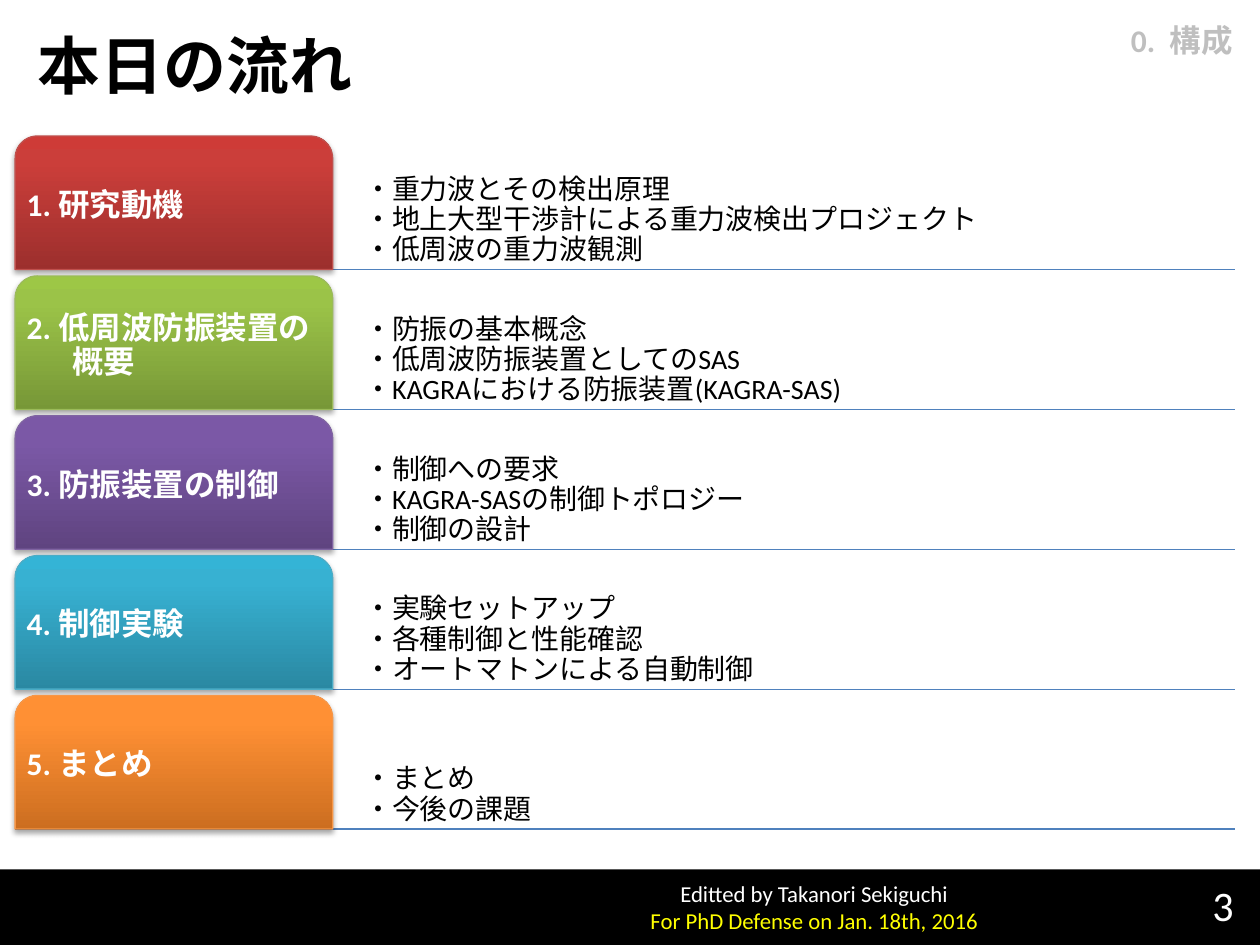
from copy import deepcopy
from dataclasses import dataclass

from lxml import etree
from pptx import Presentation
from pptx import util as u
from pptx.dml.color import RGBColor
from pptx.enum import shapes, text
from pptx.oxml import parse_xml
from pptx.oxml.ns import nsdecls, qn

FONT = "Calibri"
BLACK = RGBColor(0x00, 0x00, 0x00)
WHITE = RGBColor(0xFF, 0xFF, 0xFF)
YELLOW = RGBColor(0xFF, 0xFF, 0x00)
GREY = RGBColor(0xBF, 0xBF, 0xBF)
RULE_BLUE = RGBColor(0x4F, 0x81, 0xBD)

LEFT, RIGHT = 0.12, 9.8
TAB_W, ROW_H = 2.52, 1.06
TOP, PITCH = 1.08, 1.11


@dataclass
class Section:
    heading: list[str]
    topics: list[str]
    gradient: tuple[str, str, str]  # from bottom to top
    outline: str


@dataclass
class Style:
    size: int
    color: RGBColor
    bold: bool = False
    align: text.PP_ALIGN = text.PP_ALIGN.LEFT


TITLE = Style(36, BLACK, True)
CHAPTER = Style(18, GREY, True, text.PP_ALIGN.RIGHT)
HEADING = Style(18, WHITE, True)
TOPIC = Style(16, BLACK)
CREDIT = Style(13, WHITE, align=text.PP_ALIGN.CENTER)
OCCASION = Style(13, YELLOW, align=text.PP_ALIGN.CENTER)
PAGE = Style(24, WHITE, align=text.PP_ALIGN.RIGHT)

SECTIONS = [
    Section(["1. 研究動機"],
            ["重力波とその検出原理", "地上大型干渉計による重力波検出プロジェクト", "低周波の重力波観測"],
            ("9C2F2D", "CB3E3A", "CE3B37"), "C0504D"),
    Section(["2. 低周波防振装置の", "概要"],
            ["防振の基本概念", "低周波防振装置としてのSAS", "KAGRAにおける防振装置(KAGRA-SAS)"],
            ("779737", "9BC348", "9DC746"), "9BBB59"),
    Section(["3. 防振装置の制御"],
            ["制御への要求", "KAGRA-SASの制御トポロジー", "制御の設計"],
            ("5F4480", "7B58A6", "7C57A8"), "8064A2"),
    Section(["4. 制御実験"],
            ["実験セットアップ", "各種制御と性能確認", "オートマトンによる自動制御"],
            ("2A88A2", "37B1D2", "34B4D6"), "4BACC6"),
    Section(["5. まとめ"],
            ["まとめ", "今後の課題"],
            ("CC6E20", "FF9034", "FF9136"), "F79646"),
]


def write(p, lines: list[str], style: Style) -> None:
    """Fill one paragraph, with a line break between the lines."""
    p.alignment = style.align
    for i, line in enumerate(lines):
        if i:
            p.add_line_break()
        r = p.add_run()
        r.text = line
        r.font.name, r.font.size = FONT, u.Pt(style.size)
        r.font.bold, r.font.color.rgb = style.bold, style.color


def indent(p, left: float, first: float) -> None:
    pPr = p._p.get_or_add_pPr()
    pPr.set("marL", str(u.Inches(left)))
    pPr.set("indent", str(u.Inches(first)))


def set_frame(tf, anchor: text.MSO_ANCHOR, inset: float) -> None:
    tf.word_wrap, tf.vertical_anchor = True, anchor
    tf.margin_left = tf.margin_right = u.Inches(inset)
    tf.margin_top = tf.margin_bottom = u.Inches(inset)


def add_text(s, x: float, y: float, w: float, h: float,
             paragraphs: list[tuple[str, Style]], anchor=text.MSO_ANCHOR.TOP):
    sp = s.shapes.add_textbox(u.Inches(x), u.Inches(y), u.Inches(w), u.Inches(h))
    tf = sp.text_frame
    tf.word_wrap, tf.vertical_anchor = True, anchor
    for i, (line, style) in enumerate(paragraphs):
        write(tf.add_paragraph() if i else tf.paragraphs[0], [line], style)
    return tf


def fill_gradient(sp, colors: tuple[str, str, str]) -> None:
    sp.fill.gradient()
    sp.fill.gradient_angle = 90
    stop_list = sp._element.spPr.find(".//" + qn("a:gsLst"))
    stop_list.append(deepcopy(stop_list[-1]))
    for stop, position, color in zip(sp.fill.gradient_stops, (0, 0.8, 1), colors):
        stop.position = position
        stop.color.rgb = RGBColor.from_string(color)


def add_shadow(sp) -> None:
    sp._element.spPr.append(parse_xml(
        f'<a:effectLst {nsdecls("a")}>'
        '<a:outerShdw blurRad="40000" dist="23000" dir="5400000" rotWithShape="0">'
        '<a:srgbClr val="000000"><a:alpha val="35000"/></a:srgbClr>'
        '</a:outerShdw></a:effectLst>'))


def add_rule(s, y: float) -> None:
    line = s.shapes.add_connector(shapes.MSO_CONNECTOR.STRAIGHT, u.Inches(LEFT),
                                  u.Inches(y), u.Inches(RIGHT), u.Inches(y))
    line.line.color.rgb, line.line.width = RULE_BLUE, u.Pt(0.75)
    etree.SubElement(line._element.spPr, qn("a:effectLst"))


def add_tab(s, y: float, section: Section) -> None:
    sp = s.shapes.add_shape(shapes.MSO_SHAPE.ROUND_2_SAME_RECTANGLE, u.Inches(LEFT),
                            u.Inches(y), u.Inches(TAB_W), u.Inches(ROW_H))
    fill_gradient(sp, section.gradient)
    sp.line.color.rgb = RGBColor.from_string(section.outline)
    sp.line.width = u.Pt(0.75)
    add_shadow(sp)
    set_frame(sp.text_frame, text.MSO_ANCHOR.MIDDLE, 0.04)
    p = sp.text_frame.paragraphs[0]
    p.line_spacing = 0.9
    indent(p, 0.36, -0.36)
    write(p, section.heading, HEADING)


def add_topics(s, y: float, topics: list[str]) -> None:
    x = LEFT + TAB_W
    tf = add_text(s, x, y, RIGHT - x, ROW_H, [])
    set_frame(tf, text.MSO_ANCHOR.BOTTOM, 0.03)
    p = tf.paragraphs[0]
    p.line_spacing = 0.9
    indent(p, 0.22, 0)
    write(p, ["・" + topic for topic in topics], TOPIC)


def add_footer(s) -> None:
    bar = s.shapes.add_shape(shapes.MSO_SHAPE.RECTANGLE, 0, u.Inches(6.9),
                             u.Inches(10), u.Inches(0.6))
    bar.shadow.inherit = False
    bar.fill.solid()
    bar.fill.fore_color.rgb = BLACK
    bar.line.fill.background()
    tf = add_text(s, 5.01, 6.93, 2.9, 0.54,
                  [("Editted by Takanori Sekiguchi", CREDIT),
                   ("For PhD Defense on Jan. 18th, 2016", OCCASION)])
    tf.word_wrap = False
    add_text(s, 9.02, 6.98, 0.87, 0.4, [("3", PAGE)], text.MSO_ANCHOR.MIDDLE)


def main() -> None:
    prs = Presentation()
    prs.slide_width, prs.slide_height = u.Inches(10), u.Inches(7.5)
    s = prs.slides.add_slide(prs.slide_layouts[6])
    add_footer(s)
    add_text(s, 0.2, 0.13, 9.53, 0.76, [("本日の流れ", TITLE)], text.MSO_ANCHOR.MIDDLE)
    for i, section in enumerate(SECTIONS):
        y = TOP + i * PITCH
        add_rule(s, y + ROW_H)
        add_topics(s, y, section.topics)
        add_tab(s, y, section)
    add_text(s, 6.03, 0.12, 3.85, 0.4, [("0.  構成", CHAPTER)])
    prs.save("out.pptx")


if __name__ == "__main__":
    main()
